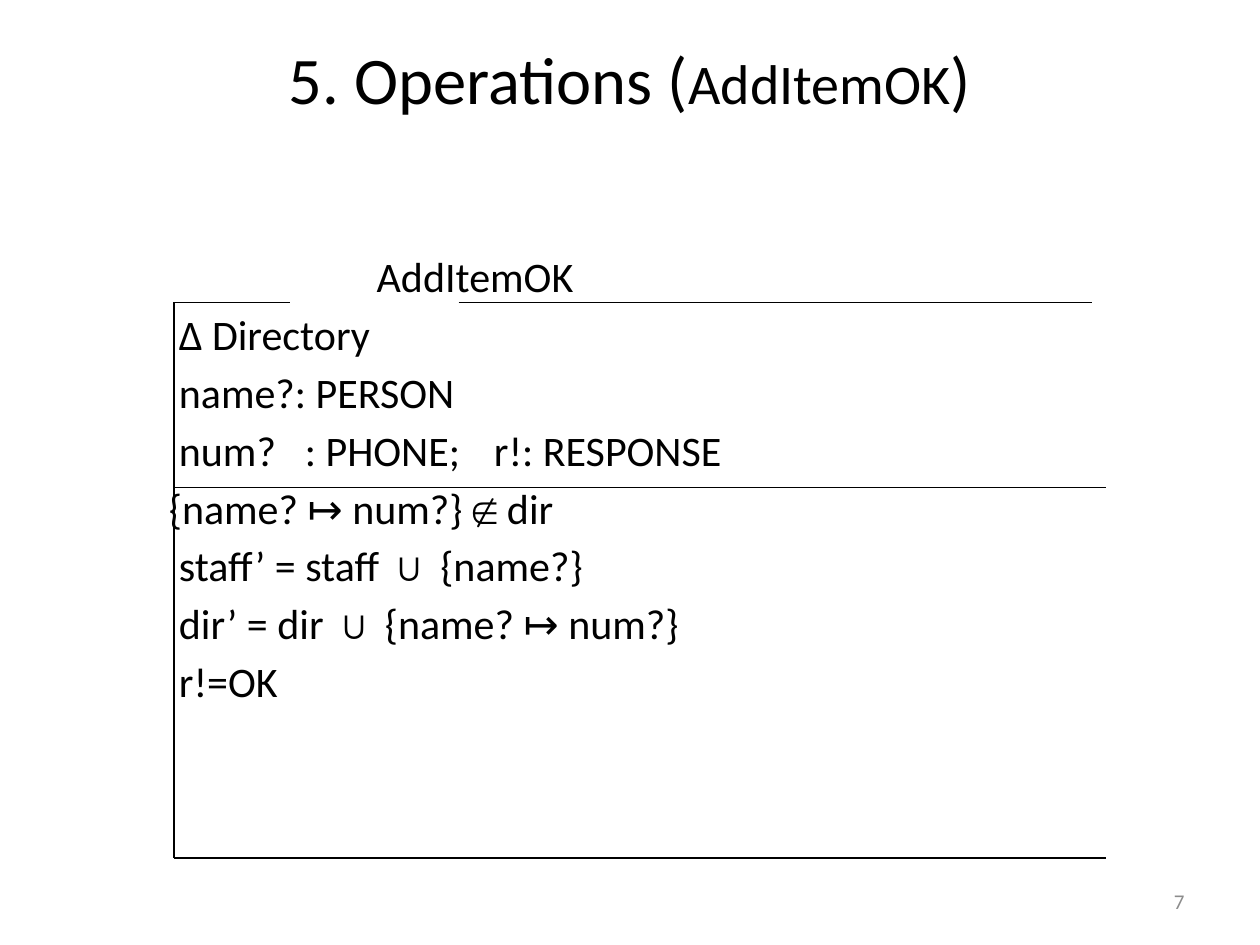
from lxml import etree
from pptx import Presentation
from pptx import util as u
from pptx.dml.color import RGBColor
from pptx.enum import shapes, text
from pptx.oxml.ns import qn

COLORS = {"ink": "000000", "number": "8C8C8C"}
FONT = "Calibri"
SYMBOL_FONTS = {"∉": "Courier New", "∪": "Times New Roman"}

# Content: title runs with sizes, schema lines with left indents in inches
TITLE = [("5. Operations (", 38), ("AddItemOK", 32), (")", 38)]
SCHEMA = [
    (1.65, ["AddItemOK"]),
    (0.08, ["Δ Directory"]),
    (0.08, ["name?: PERSON"]),
    (0.08, ["num?\t: PHONE;\tr!: RESPONSE"]),
    (0, ["{name? ↦ num?} ", "∉", " dir"]),
    (0.08, ["staff’ = staff ", "∪", " {name?}"]),
    (0.08, ["dir’ = dir ", "∪", " {name? ↦ num?}"]),
    (0.08, ["r!=OK"]),
]
TAB_STOPS = [0.92, 2.76]
SLIDE_NUMBER = "7"

# Schema frame: shared edges, then lines as (x1, y1, x2, y2)
LEFT, RIGHT = 1.38, 8.78
TOP, DIVIDER, BOTTOM = 2.4, 3.87, 6.81
FRAME = [
    (LEFT, TOP, 2.3, TOP),
    (LEFT, TOP, LEFT, BOTTOM),
    (3.64, TOP, 8.67, TOP),
    (LEFT, DIVIDER, RIGHT, DIVIDER),
    (LEFT, BOTTOM, RIGHT, BOTTOM),
]


def set_font(font, size, color, name=FONT):
    font.name = name
    font.size = u.Pt(size)
    font.color.rgb = RGBColor.from_string(COLORS[color])


def add_text_box(slide, left, top, width, height):
    box = slide.shapes.add_textbox(*map(u.Inches, (left, top, width, height)))
    box.text_frame.word_wrap = True
    return box.text_frame


def set_indent(paragraph, indent):
    properties = paragraph._p.get_or_add_pPr()
    properties.set("marL", str(u.Inches(indent)))
    properties.set("indent", "0")
    return properties


def add_tab_stops(properties):
    tabs = etree.SubElement(properties, qn("a:tabLst"))
    for position in TAB_STOPS:
        etree.SubElement(tabs, qn("a:tab"), pos=str(u.Inches(position)), algn="l")


def add_line(slide, x1, y1, x2, y2):
    line = slide.shapes.add_connector(
        shapes.MSO_CONNECTOR.STRAIGHT, *map(u.Inches, (x1, y1, x2, y2)))
    line.line.color.rgb = RGBColor.from_string(COLORS["ink"])
    line.line.width = u.Pt(0.75)
    etree.SubElement(line._element.spPr, qn("a:effectLst"))


presentation = Presentation()
presentation.slide_width, presentation.slide_height = u.Inches(10), u.Inches(7.5)
slide = presentation.slides.add_slide(presentation.slide_layouts[5])

# Title
title = slide.shapes.title
title.left, title.top, title.width, title.height = map(u.Inches, (0.5, 0.3, 9, 1.25))
frame = title.text_frame
frame.auto_size = text.MSO_AUTO_SIZE.NONE
frame.vertical_anchor = text.MSO_ANCHOR.TOP
frame.margin_top = 0
paragraph = frame.paragraphs[0]
paragraph.alignment = text.PP_ALIGN.CENTER
for words, size in TITLE:
    run = paragraph.add_run()
    run.text = words
    set_font(run.font, size, "ink")

# Schema text
frame = add_text_box(slide, 1.17, 1.94, 9.04, 4.89)
frame.margin_left = u.Inches(0.17)
for index, (indent, pieces) in enumerate(SCHEMA):
    paragraph = frame.add_paragraph() if index else frame.paragraphs[0]
    paragraph.space_before = u.Pt(4.25)
    properties = set_indent(paragraph, indent)
    if "\t" in pieces[0]:
        add_tab_stops(properties)
    for piece in pieces:
        run = paragraph.add_run()
        run.text = piece
        set_font(run.font, 24, "ink", SYMBOL_FONTS.get(piece, FONT))
        run.font.bold = piece in SYMBOL_FONTS

# Schema frame
for ends in FRAME:
    add_line(slide, *ends)

# Slide number
frame = add_text_box(slide, 7.17, 6.95, 2.33, 0.4)
frame.vertical_anchor = text.MSO_ANCHOR.MIDDLE
paragraph = frame.paragraphs[0]
paragraph.text = SLIDE_NUMBER
paragraph.alignment = text.PP_ALIGN.RIGHT
set_font(paragraph.font, 12, "number")

presentation.save("out.pptx")
